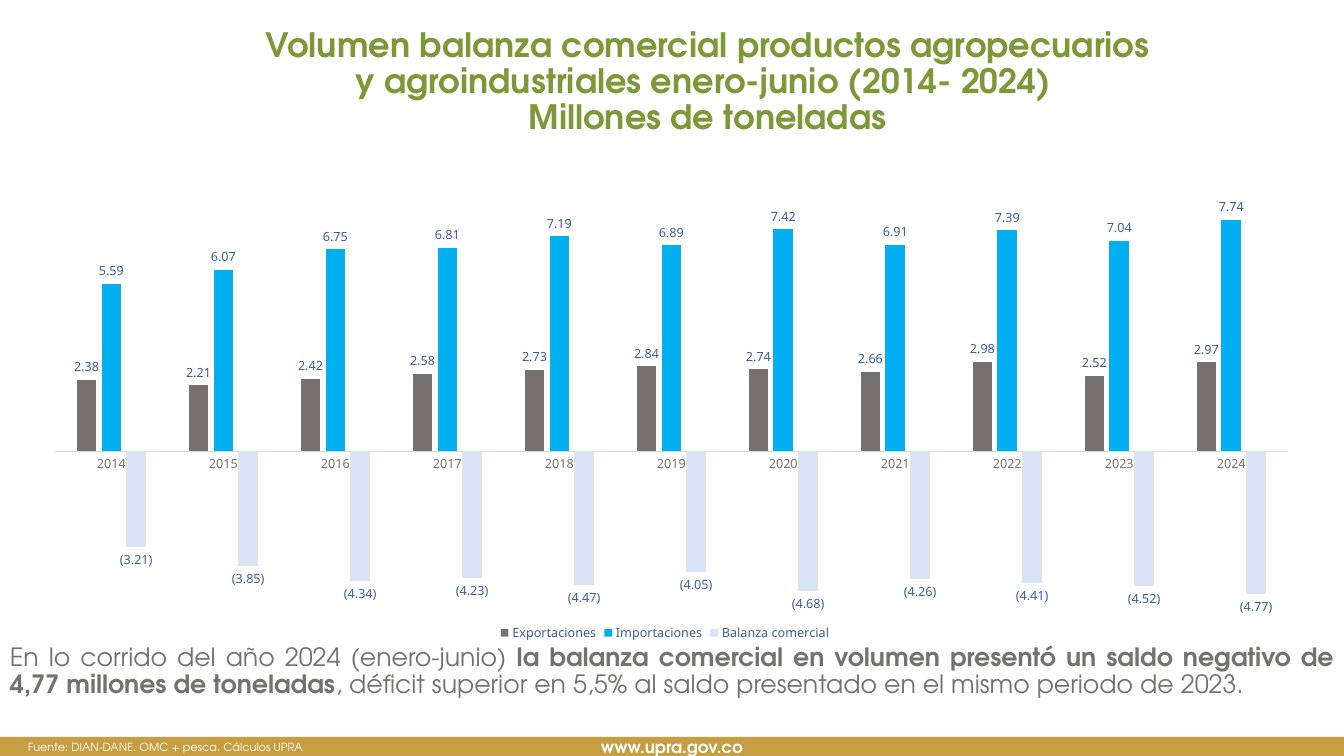
import pptx
import pptx.chart.data
import pptx.dml.color
import pptx.enum.chart
import pptx.enum.shapes
import pptx.enum.text
import pptx.oxml
import pptx.oxml.ns
import pptx.util
from dataclasses import dataclass

PX_PER_INCH = 100.8


@dataclass(frozen=True)
class Theme:
    font: str = "TeX Gyre Adventor"
    chart_font: str = "Noto Sans"
    green: str = "7D9837"
    gold: str = "C59E41"
    grey: str = "767171"
    blue: str = "395F9B"
    cyan: str = "00B0F0"
    pale: str = "DAE3F3"
    rule: str = "D9D9D9"
    white: str = "FFFFFF"
    title: int = 24
    body: int = 18
    web: int = 12
    labels: int = 9
    source: int = 8


T = Theme()
ALIGN = pptx.enum.text.PP_ALIGN
YEARS = [str(year) for year in range(2014, 2025)]
SERIES = [
    ("Exportaciones", T.grey,
     [2.38, 2.21, 2.42, 2.58, 2.73, 2.84, 2.74, 2.66, 2.98, 2.52, 2.97]),
    ("Importaciones", T.cyan,
     [5.59, 6.07, 6.75, 6.81, 7.19, 6.89, 7.42, 6.91, 7.39, 7.04, 7.74]),
    ("Balanza comercial", T.pale,
     [-3.21, -3.85, -4.34, -4.23, -4.47, -4.05, -4.68, -4.26, -4.41, -4.52, -4.77]),
]
NUMBER_FORMAT = "#,##0.00;(#,##0.00)"


def px(n):
    return pptx.util.Emu(round(n * pptx.util.Inches(1) / PX_PER_INCH))


def rgb(color):
    return pptx.dml.color.RGBColor.from_string(color)


def style_font(font, size, color, name=T.font, bold=False):
    font.name, font.size, font.bold = name, pptx.util.Pt(size), bold
    font.color.rgb = rgb(color)


def add_run(p, text, size, color, bold=False):
    r = p.add_run()
    r.text = text
    style_font(r.font, size, color, bold=bold)


def first_paragraph(tf, align, spacing=1.0):
    tf.word_wrap = True
    tf.auto_size = pptx.enum.text.MSO_AUTO_SIZE.NONE
    tf.vertical_anchor = pptx.enum.text.MSO_ANCHOR.TOP
    p = tf.paragraphs[0]
    p.alignment, p.line_spacing = align, spacing
    p.space_before = pptx.util.Pt(0)
    return p


def add_title(s, x, y, w, h):
    sp = s.shapes.title
    sp.left, sp.top, sp.width, sp.height = map(px, (x, y, w, h))
    p = first_paragraph(sp.text_frame, ALIGN.CENTER, 0.9)
    add_run(p, "Volumen balanza comercial productos agropecuarios "
               "y agroindustriales enero-junio (2014- 2024) ", T.title, T.green, True)
    p.add_line_break()
    add_run(p, "Millones de toneladas", T.title, T.green, True)


def set_inner_plot(chart, x, y, w, h):
    """Fix the inner plot area, in fractions of the chart."""
    plot_area = chart.element.xpath("c:chart/c:plotArea")[0]
    for old in plot_area.xpath("c:layout"):
        plot_area.remove(old)
    sizes = "".join(f'<c:{k} val="{v}"/>' for k, v in zip("xywh", (x, y, w, h)))
    plot_area.insert(0, pptx.oxml.parse_xml(
        f'<c:layout {pptx.oxml.ns.nsdecls("c")}><c:manualLayout>'
        '<c:layoutTarget val="inner"/><c:xMode val="edge"/><c:yMode val="edge"/>'
        f'{sizes}</c:manualLayout></c:layout>'))


def add_balance_chart(s, x, y, w, h):
    data = pptx.chart.data.CategoryChartData(number_format=NUMBER_FORMAT)
    data.categories = YEARS
    for name, _, values in SERIES:
        data.add_series(name, values)
    kind = pptx.enum.chart.XL_CHART_TYPE.COLUMN_CLUSTERED
    chart = s.shapes.add_chart(kind, px(x), px(y), px(w), px(h), data).chart
    chart.has_title = False
    style_font(chart.font, T.labels, T.blue, T.chart_font)
    set_inner_plot(chart, 0.02, 0.03, 0.97, 0.94)

    # Axes
    axis = chart.value_axis
    axis.minimum_scale, axis.maximum_scale = -6, 10
    axis.has_major_gridlines = False
    axis.visible = False
    axis = chart.category_axis
    axis.major_tick_mark = pptx.enum.chart.XL_TICK_MARK.NONE
    axis.format.line.color.rgb = rgb(T.rule)
    axis.format.line.width = pptx.util.Pt(0.75)
    style_font(axis.tick_labels.font, T.labels, T.grey, T.chart_font)

    # Columns and their values
    plot = chart.plots[0]
    plot.gap_width, plot.overlap = 219, -27
    plot.vary_by_categories = False
    for series, (_, color, _) in zip(plot.series, SERIES):
        series.invert_if_negative = False
        series.format.fill.solid()
        series.format.fill.fore_color.rgb = rgb(color)
        labels = series.data_labels
        labels.show_value = True
        labels.position = pptx.enum.chart.XL_LABEL_POSITION.OUTSIDE_END
        labels.number_format = NUMBER_FORMAT
        labels.number_format_is_linked = False
        style_font(labels.font, T.labels, T.blue, T.chart_font)

    # Legend
    chart.has_legend = True
    chart.legend.position = pptx.enum.chart.XL_LEGEND_POSITION.BOTTOM
    chart.legend.include_in_layout = False
    style_font(chart.legend.font, T.labels, T.blue, T.chart_font)


def add_summary(s, x, y, w, h):
    tf = s.shapes.add_textbox(px(x), px(y), px(w), px(h)).text_frame
    p = first_paragraph(tf, ALIGN.JUSTIFY, 0.9)
    for text, bold in [
        ("En lo corrido del año 2024 (enero-junio) ", False),
        ("la balanza comercial en volumen presentó un saldo negativo de "
         "4,77 millones de toneladas", True),
        (", déficit superior en 5,5% al saldo presentado en el mismo periodo de 2023.",
         False),
    ]:
        add_run(p, text, T.body, T.grey, bold)


def add_footer(s, x, y, w, h):
    # Band with the web address
    rect = pptx.enum.shapes.MSO_SHAPE.RECTANGLE
    sp = s.shapes.add_shape(rect, px(x), px(y), px(w), px(h))
    sp.shadow.inherit = False
    sp.fill.solid()
    sp.fill.fore_color.rgb = rgb(T.gold)
    sp.line.fill.background()
    p = first_paragraph(sp.text_frame, ALIGN.CENTER)
    sp.text_frame.vertical_anchor = pptx.enum.text.MSO_ANCHOR.MIDDLE
    add_run(p, "www.upra.gov.co", T.web, T.white, True)

    # Source
    tf = s.shapes.add_textbox(px(x + 18), px(y - 2), px(w - 43), px(24)).text_frame
    p = first_paragraph(tf, ALIGN.JUSTIFY)
    add_run(p, "Fuente: DIAN-DANE. OMC + pesca. Cálculos UPRA", T.source, T.white)


def main():
    prs = pptx.Presentation()
    prs.slide_width, prs.slide_height = px(1344), px(756)
    s = prs.slides.add_slide(prs.slide_layouts.get_by_name("Title Only"))
    add_footer(s, 0, 737, 1344, 19)
    add_title(s, 246, 23, 923, 108)
    add_summary(s, 0, 640, 1344, 86)
    add_balance_chart(s, 30, 137, 1270, 509)
    prs.save("out.pptx")


if __name__ == "__main__":
    main()
